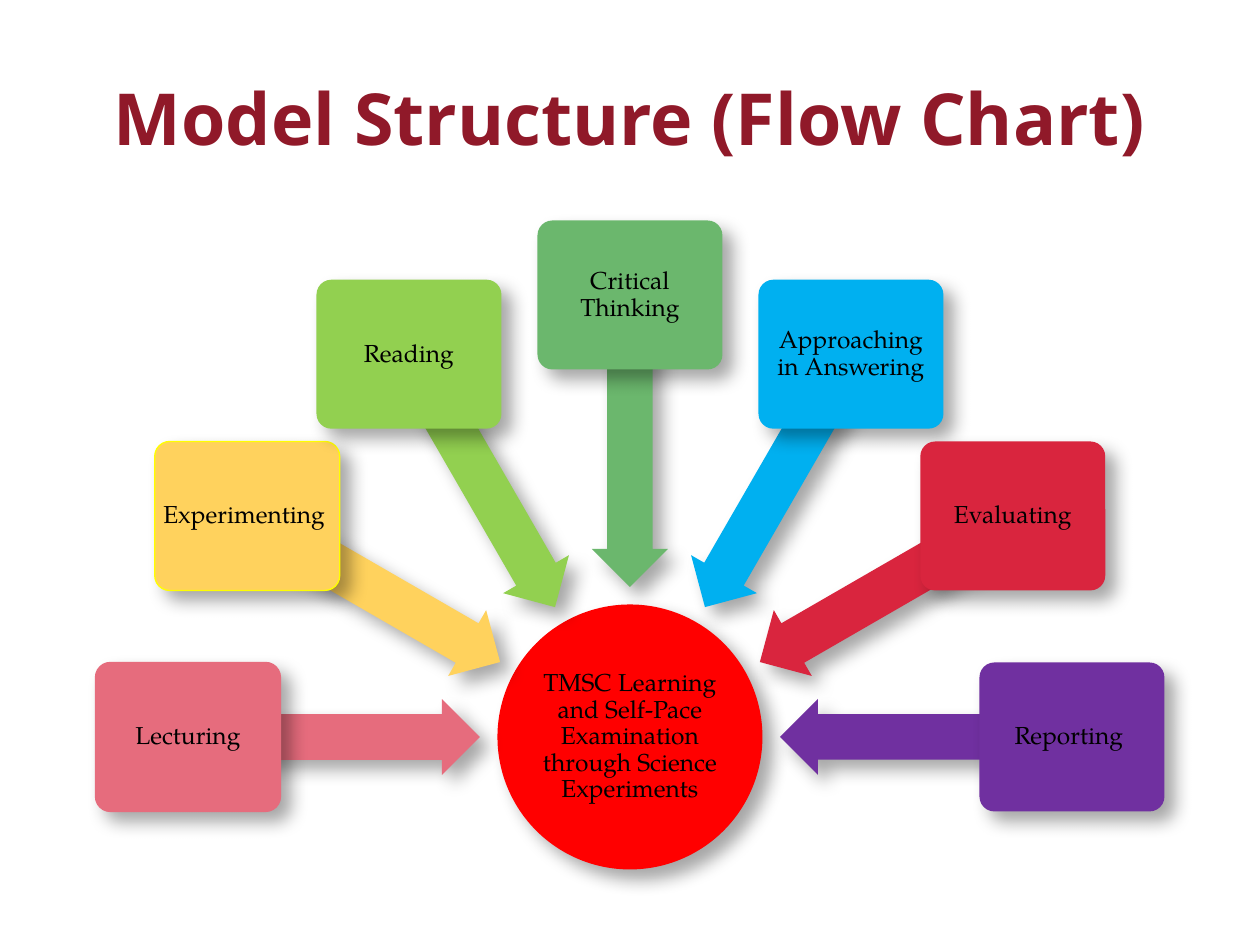
from dataclasses import dataclass
from math import cos, radians, sin

from lxml import etree
from pptx import Presentation
from pptx.dml.color import RGBColor
from pptx.enum.shapes import MSO_SHAPE
from pptx.enum.text import MSO_ANCHOR, PP_ALIGN
from pptx.oxml.ns import qn
from pptx.util import Emu, Pt

ELLIPSE = MSO_SHAPE.OVAL
BOX = MSO_SHAPE.ROUNDED_RECTANGLE
ARROW = MSO_SHAPE.LEFT_ARROW
MIDDLE = MSO_ANCHOR.MIDDLE
CENTER = PP_ALIGN.CENTER

PX_PER_INCH = 126
SLIDE_SIZE = (1260, 945)
HUB_CENTER = (630, 737)
HUB_SIZE = (265, 265)
ARROW_SIZE = (292, 76)
BOX_SIZE = (185, 149)
ARROW_RADIUS = 296
BOX_RADIUS = 442
START_ANGLE = 180
ANGLE_STEP = 30

COLORS = {
    "title": "901929",
    "text": "000000",
    "shadow": "000000",
    "hub": "FF0000",
    "rose": "E66C7D",
    "amber": "FFD25D",
    "yellow": "FFFF00",
    "lime": "92D050",
    "green": "6BB76D",
    "blue": "00B0F0",
    "crimson": "D9253E",
    "purple": "7030A0",
}
TITLE_FONT = {"name": "Open Sans", "size": Pt(41), "bold": True}
LABEL_FONT = {"name": "TeX Gyre Pagella", "size": Pt(14)}
SHADOW = {"blurRad": "130000", "dist": "101600", "dir": "2700000",
          "algn": "tl", "rotWithShape": "0"}


@dataclass(frozen=True)
class Activity:
    label: str
    color: str
    outline: str | None = None


ACTIVITIES = (
    Activity("Lecturing", "rose", "rose"),
    Activity("Experimenting ", "amber", "yellow"),
    Activity("Reading", "lime"),
    Activity("Critical Thinking", "green"),
    Activity("Approaching in Answering", "blue"),
    Activity("Evaluating", "crimson"),
    Activity("Reporting ", "purple"),
)


def px(length: float) -> Emu:
    return Emu(round(length * 914400 / PX_PER_INCH))


def rgb(color: str) -> RGBColor:
    return RGBColor.from_string(COLORS[color])


def add_shadow(shape) -> None:
    """Give the shape a soft shadow towards the lower right."""
    shape.shadow.inherit = False
    effects = shape._element.spPr.find(qn("a:effectLst"))
    shadow = etree.SubElement(effects, qn("a:outerShdw"), SHADOW)
    color = etree.SubElement(shadow, qn("a:srgbClr"), val=COLORS["shadow"])
    etree.SubElement(color, qn("a:alpha"), val="35000")


def write_text(shape, text: str, font: dict, color: str,
               line_spacing: float = 1.0, inset: int | None = None) -> None:
    frame = shape.text_frame
    frame.word_wrap = True
    frame.vertical_anchor = MIDDLE
    if inset is not None:
        for side in ("left", "right", "top", "bottom"):
            setattr(frame, f"margin_{side}", px(inset))
    paragraph = frame.paragraphs[0]
    paragraph.alignment = CENTER
    paragraph.line_spacing = line_spacing
    run = paragraph.add_run()
    run.text = text
    for name, value in font.items():
        setattr(run.font, name, value)
    run.font.color.rgb = rgb(color)


def add_centered_shape(slide, kind, center: tuple, size: tuple, color: str,
                       outline: str | None = None):
    (x, y), (width, height) = center, size
    shape = slide.shapes.add_shape(
        kind, px(x - width / 2), px(y - height / 2), px(width), px(height))
    shape.fill.solid()
    shape.fill.fore_color.rgb = rgb(color)
    if outline:
        shape.line.color.rgb = rgb(outline)
        shape.line.width = Pt(0.75)
    else:
        shape.line.fill.background()
    add_shadow(shape)
    return shape


def around_hub(angle: int, radius: int) -> tuple[float, float]:
    x, y = HUB_CENTER
    return x + radius * cos(radians(angle)), y + radius * sin(radians(angle))


def add_activity(slide, activity: Activity, angle: int) -> None:
    """Draw one activity box and its arrow pointing at the hub."""
    arrow = add_centered_shape(slide, ARROW, around_hub(angle, ARROW_RADIUS),
                               ARROW_SIZE, activity.color)
    arrow.adjustments[0] = 0.6
    arrow.adjustments[1] = 0.5
    arrow.rotation = angle % 360
    box = add_centered_shape(slide, BOX, around_hub(angle, BOX_RADIUS),
                             BOX_SIZE, activity.color, activity.outline)
    box.adjustments[0] = 0.1
    write_text(box, activity.label, LABEL_FONT, "text", 0.9, inset=4)


def main() -> None:
    presentation = Presentation()
    presentation.slide_width, presentation.slide_height = map(px, SLIDE_SIZE)
    slide = presentation.slides.add_slide(presentation.slide_layouts[6])

    title = slide.shapes.add_textbox(px(63), px(38), px(1134), px(157))
    write_text(title, "Model Structure (Flow Chart)", TITLE_FONT, "title")

    hub = add_centered_shape(slide, ELLIPSE, HUB_CENTER, HUB_SIZE, "hub")
    write_text(
        hub,
        "TMSC Learning and Self-Pace Examination through Science Experiments",
        LABEL_FONT, "text", 0.9, inset=1)

    for index, activity in enumerate(ACTIVITIES):
        add_activity(slide, activity, START_ANGLE + index * ANGLE_STEP)

    presentation.save("out.pptx")


if __name__ == "__main__":
    main()
